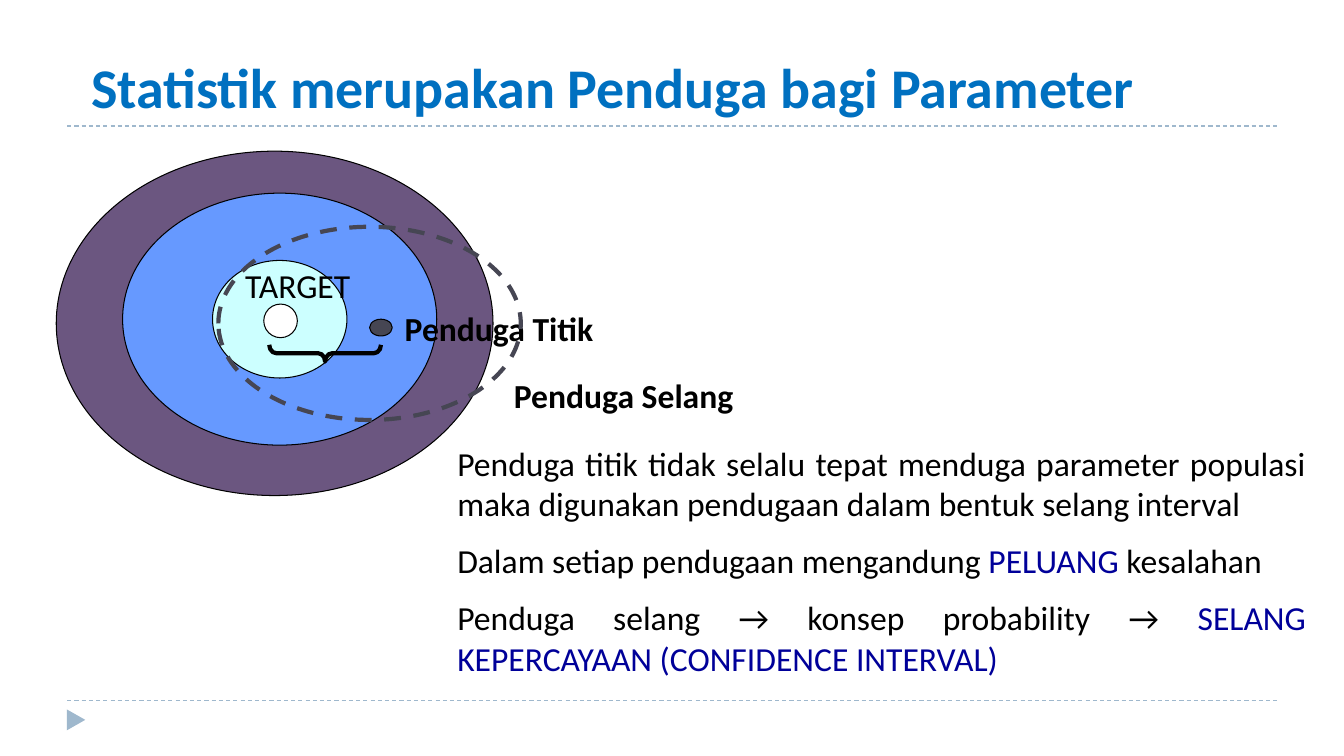
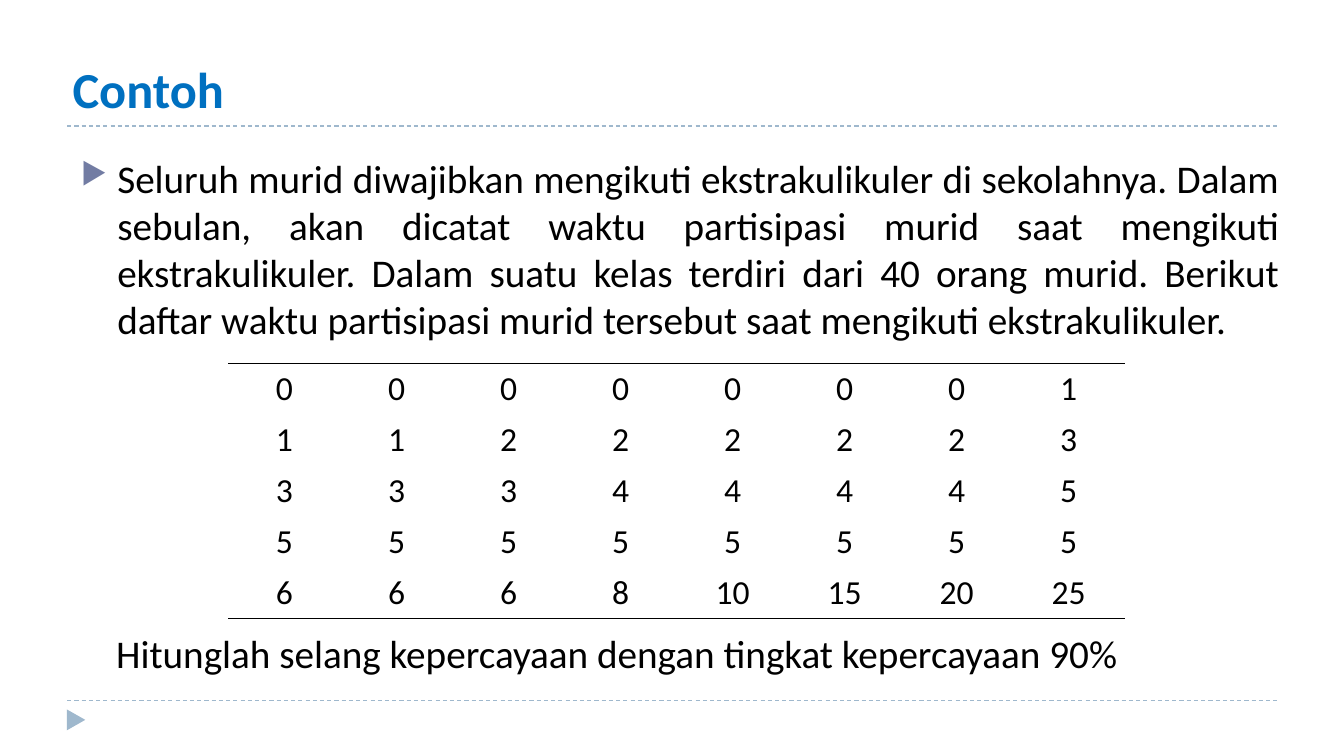
from lxml import etree
from pptx import Presentation
from pptx import util as u
from pptx.dml.color import RGBColor
from pptx.enum import dml, shapes, text
from pptx.oxml import ns

WIDTH, HEIGHT = u.Inches(13.333), u.Inches(7.5)
COLUMN, ROW = WIDTH / 160, HEIGHT / 90
FONT = "Calibri"
BLACK, WHITE, TITLE_BLUE, KEYWORD_BLUE = "000000", "FFFFFF", "0070C0", "000099"
RULE_BLUE, SLATE, BULLET_BLUE = "9FB8CD", "464653", "727CA3"
RINGS = [
    ((6.7, 18, 52, 41), "6B5680"),
    ((14.6, 23, 37.4, 30), "6699FF"),
    ((25.3, 31, 16, 14), "CCFFFF"),
    ((31.4, 36.2, 4, 4), WHITE),
]
EXPLANATION = [
    [("Penduga titik tidak selalu tepat menduga parameter populasi maka "
      "digunakan pendugaan dalam bentuk selang interval", BLACK)],
    [("Dalam setiap pendugaan mengandung ", BLACK), ("PELUANG ", KEYWORD_BLUE), ("kesalahan", BLACK)],
    [("Penduga selang → konsep probability → ", BLACK),
     ("SELANG KEPERCAYAAN (CONFIDENCE INTERVAL)", KEYWORD_BLUE)],
]
PROBLEM = (
    "Seluruh murid diwajibkan mengikuti ekstrakulikuler di sekolahnya. Dalam sebulan, akan dicatat "
    "waktu partisipasi murid saat mengikuti ekstrakulikuler. Dalam suatu kelas terdiri dari 40 orang "
    "murid. Berikut daftar waktu partisipasi murid tersebut saat mengikuti ekstrakulikuler."
)
QUESTION = "Hitunglah selang kepercayaan dengan tingkat kepercayaan 90%"
PARTICIPATION = [
    [0, 0, 0, 0, 0, 0, 0, 1],
    [1, 1, 2, 2, 2, 2, 2, 3],
    [3, 3, 3, 4, 4, 4, 4, 5],
    [5, 5, 5, 5, 5, 5, 5, 5],
    [6, 6, 6, 8, 10, 15, 20, 25],
]


def color(code):
    """Turn a hex string into a colour."""
    return RGBColor.from_string(code)


def place(left, top, width, height):
    """Turn grid columns and rows into lengths."""
    return int(left * COLUMN), int(top * ROW), int(width * COLUMN), int(height * ROW)


def child(parent, tag, **attributes):
    """Append a drawing element to a parent."""
    return etree.SubElement(parent, ns.qn(tag), attributes)


def style_line(line, code, points, dashed=False):
    """Set the colour, width and dash of a line."""
    line.color.rgb = color(code)
    line.width = u.Pt(points)
    if dashed:
        line.dash_style = dml.MSO_LINE.DASH


def style_run(run, size, code=BLACK, bold=False):
    """Set the font of a run."""
    run.font.name, run.font.size, run.font.bold = FONT, u.Pt(size), bold
    run.font.color.rgb = color(code)


def add_figure(slide, preset, box, fill=None, line=None, points=0.75, dashed=False):
    """Add a preset shape with an optional fill and outline."""
    figure = slide.shapes.add_shape(preset, *place(*box))
    figure.shadow.inherit = False
    if fill:
        figure.fill.solid()
        figure.fill.fore_color.rgb = color(fill)
    else:
        figure.fill.background()
    if line:
        style_line(figure.line, line, points, dashed)
    else:
        figure.line.fill.background()
    return figure


def add_rule(slide, row):
    """Add a dashed rule across the slide."""
    left, top, width, _ = place(8, row, 144, 0)
    rule = slide.shapes.add_connector(shapes.MSO_CONNECTOR.STRAIGHT, left, top, left + width, top)
    style_line(rule.line, RULE_BLUE, 0.75, True)
    child(rule.element.spPr, "a:effectLst")


def add_text(slide, box, paragraphs, size, bold=False, justified=False, gap=0, inset=0.1):
    """Add wrapped text whose paragraphs are lists of wording and colour."""
    frame = slide.shapes.add_textbox(*place(*box)).text_frame
    frame.word_wrap = True
    frame.margin_left = frame.margin_right = u.Inches(inset)
    frame.margin_top = frame.margin_bottom = u.Inches(inset / 2)
    for number, pieces in enumerate(paragraphs):
        paragraph = frame.add_paragraph() if number else frame.paragraphs[0]
        paragraph.space_before = u.Pt(gap if number else 0)
        if justified:
            paragraph.alignment = text.PP_ALIGN.JUSTIFY
        for wording, code in pieces:
            run = paragraph.add_run()
            run.text = wording
            style_run(run, size, code, bold)
    return frame


def add_label(slide, box, wording, bold=True):
    """Add a short label of the target diagram."""
    add_text(slide, box, [[(wording, BLACK)]], 24, bold)


def add_bullet(paragraph):
    """Give a paragraph a hanging triangle bullet."""
    indent = u.Inches(0.36)
    properties = paragraph._p.get_or_add_pPr()
    properties.set("marL", str(indent))
    properties.set("indent", str(-indent))
    child(child(properties, "a:buClr"), "a:srgbClr", val=BULLET_BLUE)
    child(properties, "a:buSzPct", val="76000")
    child(properties, "a:buChar", char="▶")


def add_border(cell, tag):
    """Draw a thin black border on one side of a cell."""
    properties = cell._tc.get_or_add_tcPr()
    border = child(properties, tag, w=str(u.Pt(1)))
    child(child(border, "a:solidFill"), "a:srgbClr", val=BLACK)
    properties.insert(0, border)


def add_data_table(slide, box, values):
    """Add an open table ruled above and below."""
    frame = slide.shapes.add_table(len(values), len(values[0]), *place(*box))
    frame.element.xpath(".//a:tableStyleId")[0].text = "{2D5ABB26-0587-4C30-8999-92F81FD0307C}"
    table = frame.table
    table.first_row = table.horz_banding = False
    for row, numbers in enumerate(values):
        for column, number in enumerate(numbers):
            cell = table.cell(row, column)
            cell.fill.background()
            paragraph = cell.text_frame.paragraphs[0]
            paragraph.text = str(number)
            paragraph.alignment = text.PP_ALIGN.CENTER
            style_run(paragraph.runs[0], 24)
            if row == 0:
                add_border(cell, "a:lnT")
            if row == len(values) - 1:
                add_border(cell, "a:lnB")


def start_slide(deck, title, box, size):
    """Add a slide with its rules, corner marker and title."""
    slide = deck.slides.add_slide(deck.slide_layouts[6])
    for row in (83.4, 15):
        add_rule(slide, row)
    marker = add_figure(slide, shapes.MSO_SHAPE.ISOSCELES_TRIANGLE, (7.8, 84.6, 2.5, 2.2), RULE_BLUE)
    marker.rotation = 90
    heading = add_text(slide, box, [[(title, TITLE_BLUE)]], size, True, inset=0.12)
    heading.vertical_anchor = text.MSO_ANCHOR.BOTTOM
    return slide


def build_estimators(deck):
    """Build the slide on point and interval estimators."""
    slide = start_slide(deck, "Statistik merupakan Penduga bagi Parameter", (9.4, 5.5, 145.6, 9.5), 40)
    oval = shapes.MSO_SHAPE.OVAL
    for box, fill in RINGS:
        add_figure(slide, oval, box, fill, BLACK)
    add_label(slide, (28, 31, 20, 6.1), "TARGET", False)
    add_figure(slide, oval, (44, 38, 2.7, 2), SLATE, BLACK)
    brace = add_figure(slide, shapes.MSO_SHAPE.RIGHT_BRACE, (37.7, 35.4, 2, 13.3), line=BLACK, points=3)
    brace.adjustments[0] = 0.42
    brace.rotation = 90
    add_label(slide, (47, 36.1, 30.8, 6.1), "Penduga Titik")
    add_figure(slide, oval, (26, 27, 36, 23), line=SLATE, points=3, dashed=True)
    add_label(slide, (60, 44, 33, 6.1), "Penduga Selang")
    add_text(slide, (53, 52, 103.9, 30), EXPLANATION, 24, justified=True, gap=12, inset=0.12)


def build_example(deck):
    """Build the worked example with its data."""
    slide = start_slide(deck, "Contoh", (7.2, 1.8, 144, 13), 36)
    problem = add_text(slide, (8.2, 17.6, 145.5, 24.6), [[(PROBLEM, BLACK)]], 28, justified=True, inset=0.12)
    add_bullet(problem.paragraphs[0])
    add_data_table(slide, (27.2, 43.3, 106.7, 30.4), PARTICIPATION)
    add_text(slide, (12.4, 74.2, 141, 7), [[(QUESTION, BLACK)]], 28, inset=0.12)


def main():
    """Build and save the deck."""
    deck = Presentation()
    deck.slide_width, deck.slide_height = WIDTH, HEIGHT
    build_estimators(deck)
    build_example(deck)
    deck.save("out.pptx")


if __name__ == "__main__":
    main()
